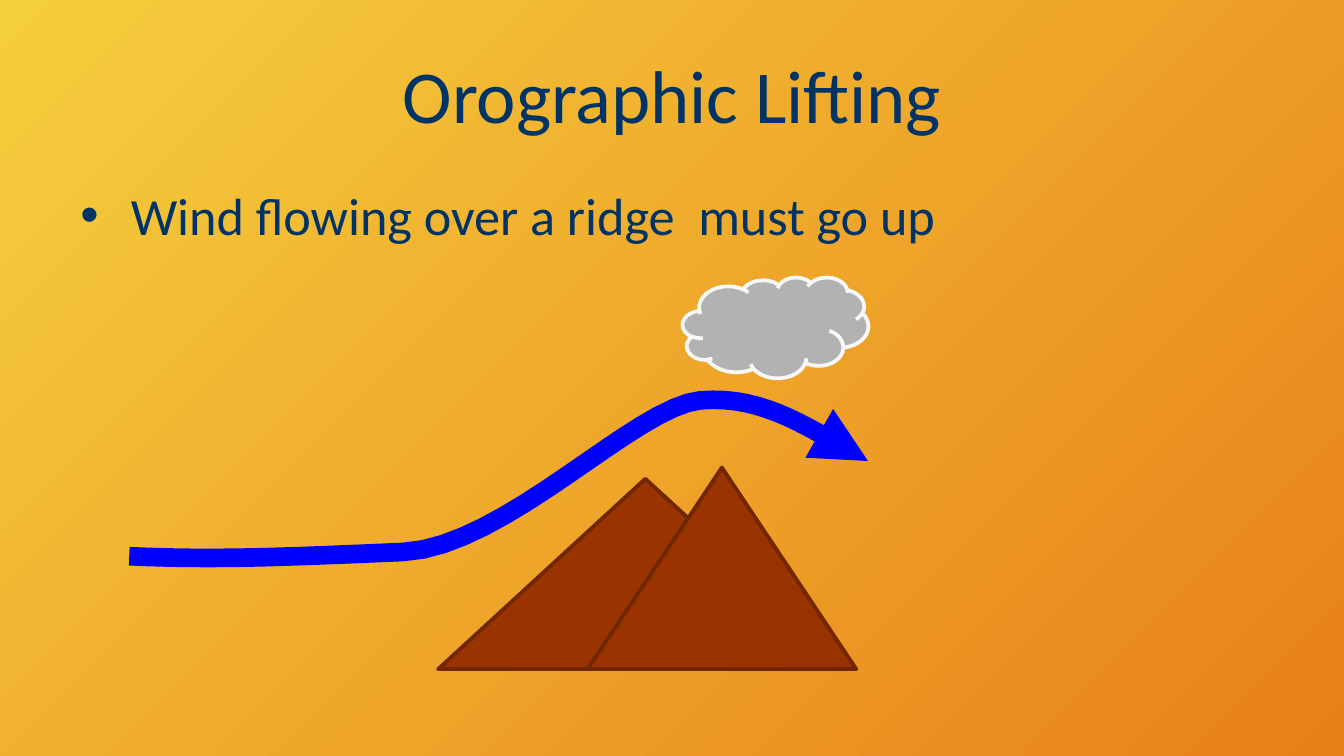
from lxml import etree
from pptx import Presentation
from pptx.dml.color import RGBColor
from pptx.enum.shapes import MSO_SHAPE
from pptx.enum.text import MSO_ANCHOR, PP_ALIGN
from pptx.oxml.ns import qn
from pptx.util import Pt

TRIANGLE, CLOUD = MSO_SHAPE.ISOSCELES_TRIANGLE, MSO_SHAPE.CLOUD
TOP, MIDDLE = MSO_ANCHOR.TOP, MSO_ANCHOR.MIDDLE
LEFT, CENTER = PP_ALIGN.LEFT, PP_ALIGN.CENTER
COLORS = {
    "sky_start": "F5CE3D", "sky_end": "E88018", "text": "003366",
    "rock": "993300", "rock_edge": "712600", "wind": "0000FF",
    "cloud": "B2B2B2", "cloud_edge": "F8F8F8",
}


def rgb(name):
    return RGBColor.from_string(COLORS[name])


def bezier(p0, p1, p2, p3, steps=16):
    """Return points along a cubic curve, without its start point."""
    points = []
    for i in range(1, steps + 1):
        t = i / steps
        u = 1 - t
        points.append(tuple(
            u**3 * a + 3 * u * u * t * b + 3 * u * t * t * c + t**3 * d
            for a, b, c, d in zip(p0, p1, p2, p3)))
    return points


prs = Presentation()
prs.slide_width, prs.slide_height = Pt(720), Pt(405)
s = prs.slides.add_slide(prs.slide_layouts[6])

# Background, from top left to bottom right
fill = s.background.fill
fill.gradient()
fill.gradient_angle = 315
for stop, name in zip(fill.gradient_stops, ("sky_start", "sky_end")):
    stop.color.rgb = rgb(name)

# Title and bullet
texts = [
    ("Orographic Lifting", 16.5, 67.5, 40, MIDDLE, CENTER),
    ("Wind flowing over a ridge  must go up", 94.5, 48, 28, TOP, LEFT),
]
for text, top, height, size, anchor, align in texts:
    tf = s.shapes.add_textbox(Pt(36), Pt(top), Pt(648), Pt(height)).text_frame
    tf.word_wrap = True
    tf.vertical_anchor = anchor
    p = tf.paragraphs[0]
    p.alignment = align
    r = p.add_run()
    r.text = text
    for key, value in {"name": "Calibri", "size": Pt(size)}.items():
        setattr(r.font, key, value)
    r.font.color.rgb = rgb("text")

# The last paragraph is the bullet
pPr = p._p.get_or_add_pPr()
pPr.set("marL", str(Pt(27)))
pPr.set("indent", str(Pt(-27)))
spacing = etree.SubElement(pPr, qn("a:spcBef"))
etree.SubElement(spacing, qn("a:spcPct"), val="20000")
etree.SubElement(pPr, qn("a:buFont"), typeface="Arial")
etree.SubElement(pPr, qn("a:buChar"), char="•")

# Mountains
shapes = [
    (TRIANGLE, 234.75, 256.5, 222, 102, "rock"),
    (TRIANGLE, 314.75, 250.5, 144, 108, "rock"),
    (CLOUD, 365.75, 148.5, 99.5, 54, "cloud"),
]
for kind, left, top, width, height, name in shapes:
    sp = s.shapes.add_shape(kind, Pt(left), Pt(top), Pt(width), Pt(height))
    sp.shadow.inherit = False
    sp.fill.solid()
    sp.fill.fore_color.rgb = rgb(name)
    sp.line.color.rgb = rgb(name + "_edge")
    sp.line.width = Pt(2)

# Wind: three joined curves over the ridge
nodes = [
    (69.25, 298), (118, 300.25), (161.25, 298), (216, 295.75),
    (270.5, 293), (340.5, 217.5), (375.25, 214.5),
    (410.5, 211.5), (435.5, 231), (465, 247),
]
points = []
for i in range(0, len(nodes) - 1, 3):
    points += bezier(*nodes[i:i + 4])
builder = s.shapes.build_freeform(*(Pt(v) for v in nodes[0]))
builder.add_line_segments([(Pt(x), Pt(y)) for x, y in points], close=False)
wind = builder.convert_to_shape()
wind.shadow.inherit = False
wind.fill.background()
wind.line.color.rgb = rgb("wind")
wind.line.width = Pt(10)
ln = wind.line._get_or_add_ln()
etree.SubElement(ln, qn("a:round"))
etree.SubElement(ln, qn("a:tailEnd"), type="triangle")

prs.save("out.pptx")
